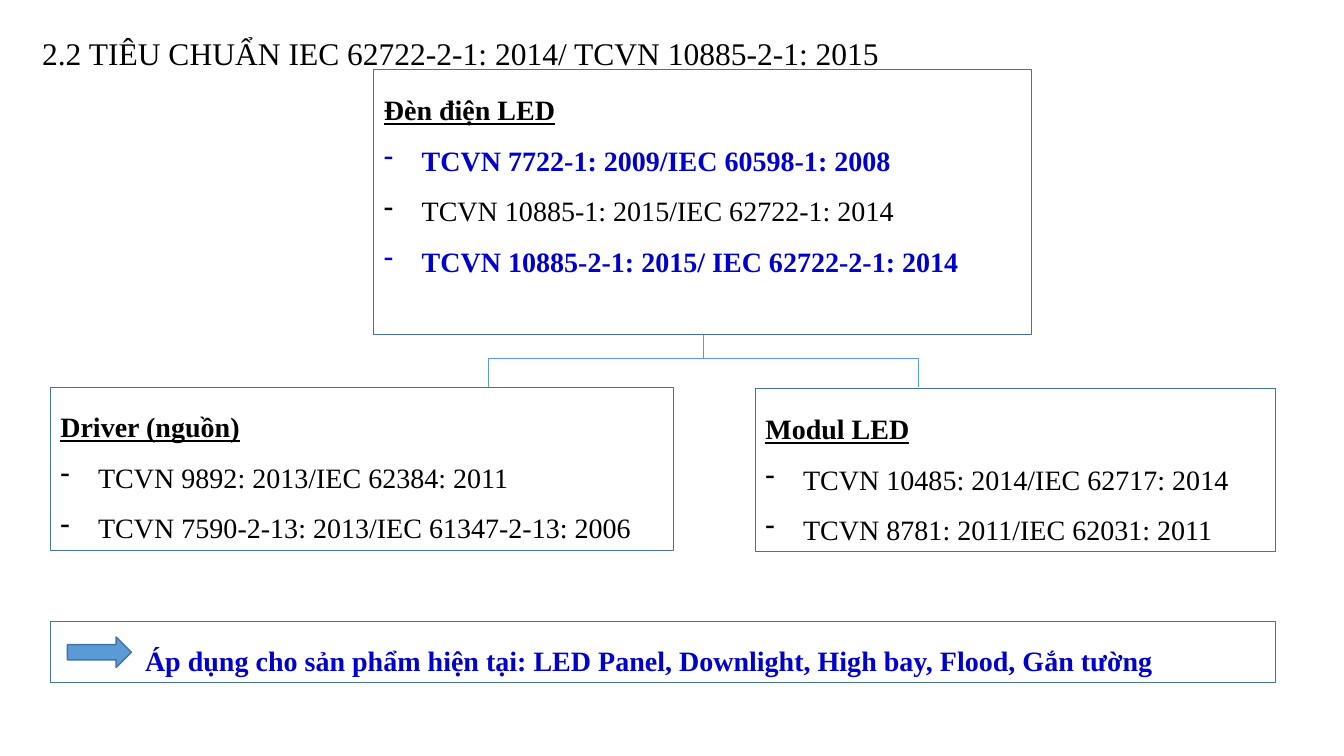
from lxml import etree
from pptx import Presentation
from pptx.dml.color import RGBColor
from pptx.enum.shapes import MSO_CONNECTOR, MSO_SHAPE
from pptx.enum.text import MSO_ANCHOR, PP_ALIGN
from pptx.oxml.ns import qn
from pptx.util import Pt

RECT, ARROW = MSO_SHAPE.RECTANGLE, MSO_SHAPE.RIGHT_ARROW
STRAIGHT = MSO_CONNECTOR.STRAIGHT
MIDDLE, LEFT = MSO_ANCHOR.MIDDLE, PP_ALIGN.LEFT

# Content
FONT = "Times New Roman"
BLACK, BLUE, BORDER, SKY = "000000", "0000CC", "43739E", "5B9BD5"
TITLE = "2.2 TIÊU CHUẨN IEC 62722-2-1: 2014/ TCVN 10885-2-1: 2015"
APPLICATION = ("Áp dụng cho sản phẩm hiện tại: LED Panel, Downlight, "
               "High bay, Flood, Gắn tường")

# Box: (left, top, width, height), bottom inset, heading, [(standard, highlighted)]
GROUPS = [
    ((267.1, 49.7, 469.5, 189.4), 39.6, "Đèn điện LED", [
        ("TCVN 7722-1: 2009/IEC 60598-1: 2008", True),
        ("TCVN 10885-1: 2015/IEC 62722-1: 2014", False),
        ("TCVN 10885-2-1: 2015/ IEC 62722-2-1: 2014", True)]),
    ((36, 276.5, 445, 116.6), 3.6, "Driver (nguồn)", [
        ("TCVN 9892: 2013/IEC 62384: 2011", False),
        ("TCVN 7590-2-13: 2013/IEC 61347-2-13: 2006", False)]),
    ((539.6, 277.7, 371.4, 116.6), 3.6, "Modul LED", [
        ("TCVN 10485: 2014/IEC 62717: 2014", False),
        ("TCVN 8781: 2011/IEC 62031: 2011", False)]),
]
TITLE_BOX = (23, 12.2, 660, 37.4)
APPLICATION_BOX = (36, 443.7, 875, 43.7)
ARROW_BOX = (48.2, 455, 45.7, 21.8)
HANGING = 27

# Connector tree
TRUNK_X, BRANCH_XS = 502.3, (348.7, 655.9)
TRUNK_TOP, BAR_Y, BRANCH_BOTTOM = 239.1, 255.7, 276.5


def colour(value):
    return RGBColor.from_string(value)


def points(values):
    return [Pt(value) for value in values]


def add_box(kind, place, fill=None, weight=0.75):
    box = slide.shapes.add_shape(kind, *points(place))
    box.shadow.inherit = False
    if fill:
        box.fill.solid()
        box.fill.fore_color.rgb = colour(fill)
    else:
        box.fill.background()
    box.line.color.rgb = colour(BORDER)
    box.line.width = Pt(weight)
    return box


def write(shape, lines, size=20, left=7.2, bottom=3.6):
    """Each line is (text, colour, bold, underline, bulleted)."""
    frame = shape.text_frame
    frame.word_wrap = True
    frame.vertical_anchor = MIDDLE
    frame.margin_left, frame.margin_bottom = Pt(left), Pt(bottom)
    for i, (text, ink, bold, underline, bulleted) in enumerate(lines):
        line = frame.add_paragraph() if i else frame.paragraphs[0]
        line.text = text
        line.alignment = LEFT
        line.line_spacing = 1.5
        font = line.font
        font.name, font.size = FONT, Pt(size)
        font.bold, font.underline = bold, underline
        font.color.rgb = colour(ink)
        if bulleted:
            props = line._p.get_or_add_pPr()
            props.set("marL", str(Pt(HANGING)))
            props.set("indent", str(-Pt(HANGING)))
            bullet = etree.Element(qn("a:buChar"), char="-")
            props.find(qn("a:lnSpc")).addnext(bullet)


def add_line(*ends):
    line = slide.shapes.add_connector(STRAIGHT, *points(ends))
    line.line.color.rgb = colour(SKY)
    line.line.width = Pt(0.5)
    etree.SubElement(line._element.spPr, qn("a:effectLst"))


prs = Presentation()
prs.slide_width, prs.slide_height = Pt(960), Pt(540)
slide = prs.slides.add_slide(prs.slide_layouts[6])

# Title
title = slide.shapes.add_textbox(*points(TITLE_BOX))
write(title, [(TITLE, BLACK, False, False, False)], size=22.5)

# Groups of standards
for place, bottom, heading, standards in GROUPS:
    lines = [(heading, BLACK, True, True, False)]
    lines += [(standard, BLUE if marked else BLACK, marked, False, True)
              for standard, marked in standards]
    write(add_box(RECT, place), lines, bottom=bottom)

# Tree from the luminaire to its parts
add_line(TRUNK_X, TRUNK_TOP, TRUNK_X, BAR_Y)
for x in BRANCH_XS:
    add_line(TRUNK_X, BAR_Y, x, BAR_Y)
    add_line(x, BAR_Y, x, BRANCH_BOTTOM)

# Application bar
application = add_box(RECT, APPLICATION_BOX)
write(application, [(APPLICATION, BLUE, True, False, False)], left=67.6)
add_box(ARROW, ARROW_BOX, fill=SKY, weight=1)

prs.save("out.pptx")
